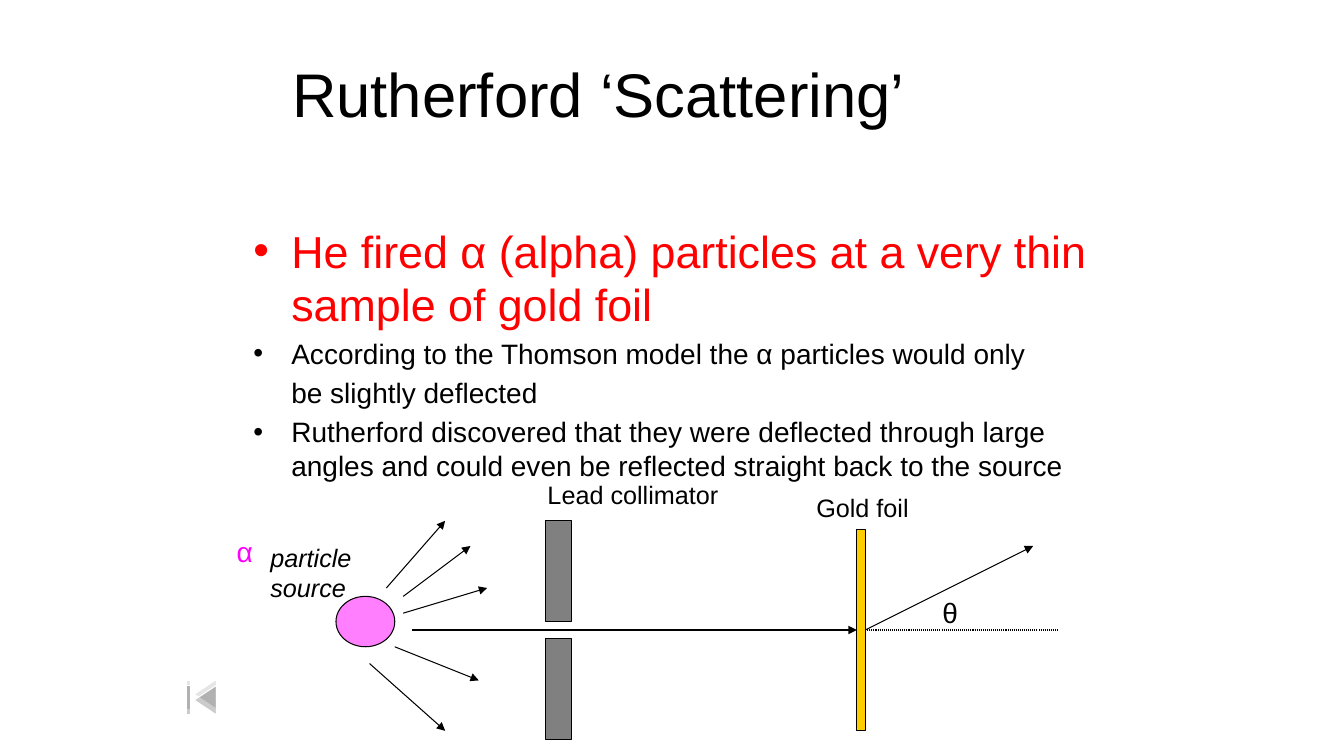
from pptx import Presentation
from pptx.dml.color import RGBColor
from pptx.enum.dml import MSO_LINE
from pptx.enum.shapes import MSO_CONNECTOR, MSO_SHAPE as SHAPE
from pptx.enum.text import MSO_ANCHOR, PP_ALIGN
from pptx.oxml.ns import qn
from pptx.util import Inches, Pt
from lxml.etree import SubElement


class Theme:
    font = "Arial"
    black, white, red = "000000", "FFFFFF", "FF0000"
    magenta, lead, gold = "FF00FF", "808080", "FFCC00"
    title, lead_point, point, label = 44, 32, 20, 18
    line = 0.75


# Content; lengths are cells of a 160 x 90 grid, 12 cells to the inch
COLS, ROWS = 160, 90
AXIS = 75  # row of the undeflected beam
INDENT = 4.5

TITLE = "Rutherford ‘Scattering’"
POINTS = [  # text, size, colour, bulleted
    ("He fired α (alpha) particles at a very thin sample of gold foil",
     Theme.lead_point, Theme.red, True),
    ("According to the Thomson model the α particles would only",
     Theme.point, Theme.black, True),
    ("be slightly deflected", Theme.point, Theme.black, False),
    ("Rutherford discovered that they were deflected through large angles "
     "and could even be reflected straight back to the source",
     Theme.point, Theme.black, True),
]
LABELS = [  # lines, box, size, colour, italic
    (["particle", "source"], (31, 64, 12.1, 8.4), Theme.label, Theme.black, True),
    (["Lead collimator"], (64, 56.5, 22.8, 4.8), Theme.label, Theme.black, False),
    (["Gold foil"], (96, 58, 13.4, 4.8), Theme.label, Theme.black, False),
    (["α"], (27, 63, 4.6, 5.2), Theme.point, Theme.magenta, False),
    (["θ"], (111, 70.3, 4.2, 5.2), Theme.point, Theme.black, False),
]
PARTS = [  # preset, box, fill, line, opacity in percent
    (SHAPE.OVAL, (40, 71, 7, 6), Theme.magenta, Theme.black, 50),
    (SHAPE.RECTANGLE, (65, AXIS - 13, 3, 12), Theme.lead, Theme.black, 100),
    (SHAPE.RECTANGLE, (65, AXIS + 1, 3, 12), Theme.lead, Theme.black, 100),
    (SHAPE.RECTANGLE, (102, AXIS - 12, 1, 24), Theme.gold, Theme.black, 100),
    (SHAPE.ACTION_BUTTON_BEGINNING, (20, 80.3, 8, 4.7), Theme.white, Theme.white, 50),
    (SHAPE.ACTION_BUTTON_BEGINNING, (20, 81, 8, 4.7), Theme.white, Theme.white, 50),
]
ARROWS = [  # from, to
    ((46, 70), (53, 62)),
    ((48, 71), (56, 65)),
    ((48, 73), (58, 70)),
    ((47, 77), (57, 81)),
    ((44, 79), (53, 87)),
    ((49, AXIS), (102, AXIS)),
    ((103, AXIS), (123, 65)),
]
UNDEFLECTED = ((103, AXIS), (126, AXIS))


def grid(*cells):
    return [Inches(c / 12) for c in cells]


def rgb(colour):
    return RGBColor.from_string(colour)


def add_run(p, text, size, colour, italic=False):
    r = p.add_run()
    r.text = text
    f = r.font
    f.name, f.size, f.italic = Theme.font, Pt(size), italic
    f.color.rgb = rgb(colour)


def add_box(s, box, wrap=True):
    tf = s.shapes.add_textbox(*grid(*box)).text_frame
    tf.word_wrap = wrap
    return tf


def next_paragraph(tf, i):
    return tf.add_paragraph() if i else tf.paragraphs[0]


def add_line(s, start, end, arrow=True):
    line = s.shapes.add_connector(MSO_CONNECTOR.STRAIGHT, *grid(*start, *end))
    line.line.color.rgb = rgb(Theme.black)
    line.line.width = Pt(Theme.line)
    if arrow:
        SubElement(line.line._get_or_add_ln(), qn("a:tailEnd"), type="triangle")
    else:
        line.line.dash_style = MSO_LINE.ROUND_DOT
    SubElement(line._element.spPr, qn("a:effectLst"))


def add_part(s, preset, box, fill, line, opacity):
    sp = s.shapes.add_shape(preset, *grid(*box))
    sp.shadow.inherit = False
    sp.fill.solid()
    sp.fill.fore_color.rgb = rgb(fill)
    sp.line.color.rgb = rgb(line)
    sp.line.width = Pt(Theme.line)
    if opacity < 100:
        clr = sp._element.spPr.find(qn("a:solidFill"))[0]
        SubElement(clr, qn("a:alpha"), val=str(opacity * 1000))


def main():
    prs = Presentation()
    prs.slide_width, prs.slide_height = grid(COLS, ROWS)
    s = prs.slides.add_slide(prs.slide_layouts[6])

    # Title
    tf = add_box(s, (17.3, 3.6, 108, 15))
    tf.vertical_anchor = MSO_ANCHOR.MIDDLE
    tf.paragraphs[0].alignment = PP_ALIGN.CENTER
    add_run(tf.paragraphs[0], TITLE, Theme.title, Theme.black)

    # Bullet points
    tf = add_box(s, (29, 26, 103, 30))
    indent = grid(INDENT)[0]
    for i, (text, size, colour, bulleted) in enumerate(POINTS):
        p = next_paragraph(tf, i)
        p.space_before = Pt(size * 0.2)
        pPr = p._p.get_or_add_pPr()
        pPr.set("marL", str(indent))
        pPr.set("indent", str(-indent if bulleted else 0))
        if bulleted:
            SubElement(pPr, qn("a:buFont"), typeface=Theme.font)
            SubElement(pPr, qn("a:buChar"), char="•")
        add_run(p, text, size, colour)

    # Apparatus, rays and labels
    for part in PARTS:
        add_part(s, *part)
    for start, end in ARROWS:
        add_line(s, start, end)
    add_line(s, *UNDEFLECTED, arrow=False)
    for lines, box, size, colour, italic in LABELS:
        tf = add_box(s, box, wrap=False)
        for i, text in enumerate(lines):
            add_run(next_paragraph(tf, i), text, size, colour, italic)

    prs.save("out.pptx")


if __name__ == "__main__":
    main()
